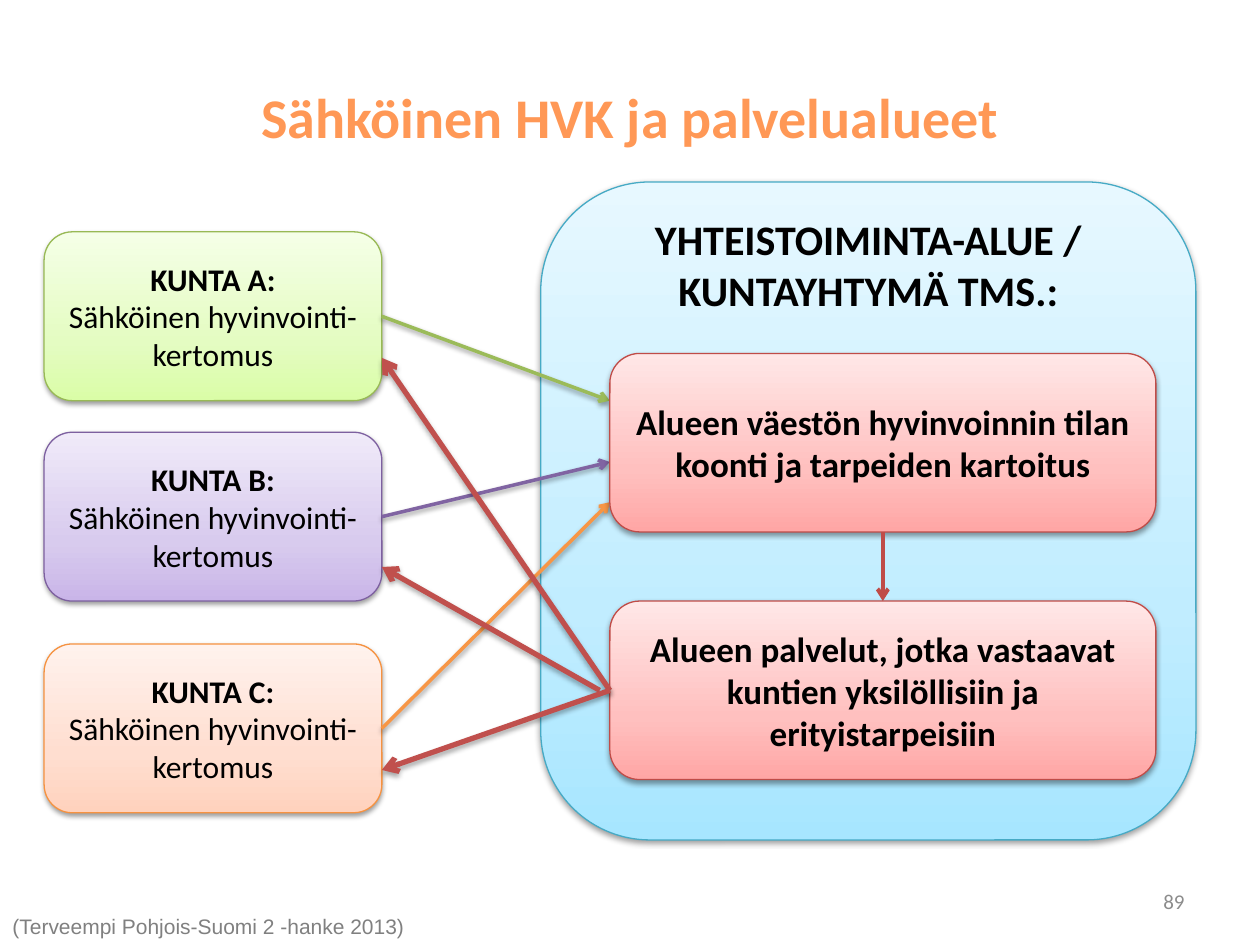
from copy import deepcopy
from dataclasses import dataclass

from pptx import Presentation
from pptx.dml.color import RGBColor
from pptx.enum.shapes import MSO_CONNECTOR, MSO_SHAPE
from pptx.enum.text import MSO_ANCHOR, PP_ALIGN
from pptx.oxml import parse_xml
from pptx.oxml.ns import nsdecls, qn
from pptx.oxml.xmlchemy import OxmlElement
from pptx.util import Pt

LEFT, CENTER, RIGHT = PP_ALIGN.LEFT, PP_ALIGN.CENTER, PP_ALIGN.RIGHT
TOP, MIDDLE = MSO_ANCHOR.TOP, MSO_ANCHOR.MIDDLE
ROUNDED, STRAIGHT = MSO_SHAPE.ROUNDED_RECTANGLE, MSO_CONNECTOR.STRAIGHT
TITLE_ONLY = 5


@dataclass(frozen=True)
class Theme:
    body_font: str = "Calibri"
    source_font: str = "Arial"
    title_size: int = 32
    region_size: int = 24
    service_size: int = 20
    municipality_size: int = 18
    note_size: int = 12
    text: str = "000000"
    title: str = "FF9856"
    number: str = "8C8C8C"
    source: str = "808080"
    feedback: str = "C0504D"
    service_line: str = "BF4C48"
    # Gradient colours run from the bottom edge to the top edge.
    green: tuple = ("DAFDA7", "E4FCC2", "F5FFE7")
    purple: tuple = ("C9B5E8", "D8CBEE", "F0EAF9")
    orange: tuple = ("FFD2BD", "FFDED0", "FFF2ED")
    blue: tuple = ("A7E6FF", "C1EDFF", "E7F8FF")
    red: tuple = ("FFA6A5", "FFC0BF", "FFE7E7")
    stops: tuple = (0, 0.35, 1)


class SlideBuilder:
    """Holds the style and the current slide."""

    def __init__(self, page, theme):
        self.page = page
        self.theme = theme

    def fill_text(self, frame, lines, size, color, align=CENTER, anchor=MIDDLE, font=None):
        """Fill a text frame with (text, bold) lines, one paragraph each."""
        frame.word_wrap = True
        frame.vertical_anchor = anchor
        for index, (text, bold) in enumerate(lines):
            para = frame.add_paragraph() if index else frame.paragraphs[0]
            para.alignment = align
            span = para.add_run()
            span.text = text
            values = {"name": font or self.theme.body_font, "size": Pt(size), "bold": bold}
            for name, value in values.items():
                setattr(span.font, name, value)
            span.font.color.rgb = RGBColor.from_string(color)

    def add_shadow(self, effects, alpha):
        effects.append(parse_xml(
            f'<a:outerShdw {nsdecls("a")} blurRad="{Pt(3.1)}" dist="{Pt(1.6)}" '
            'dir="5400000" rotWithShape="0"><a:srgbClr val="000000">'
            f'<a:alpha val="{alpha * 1000}"/></a:srgbClr></a:outerShdw>'))

    def title(self, text, *place):
        box = self.page.shapes.title
        box.left, box.top, box.width, box.height = map(Pt, place)
        self.fill_text(box.text_frame, [(text, True)], self.theme.title_size, self.theme.title)

    def label(self, text, place, color, **layout):
        box = self.page.shapes.add_textbox(*map(Pt, place))
        self.fill_text(box.text_frame, [(text, False)], self.theme.note_size, color, **layout)

    def panel(self, place, colors, line, lines, size, anchor=MIDDLE):
        box = self.page.shapes.add_shape(ROUNDED, *map(Pt, place))
        box.fill.gradient()
        box.fill.gradient_angle = 90
        stop_list = box._element.spPr.find(".//" + qn("a:gsLst"))
        stop_list.append(deepcopy(stop_list[-1]))
        for stop, color, position in zip(box.fill.gradient_stops, colors, self.theme.stops):
            stop.color.rgb = RGBColor.from_string(color)
            stop.position = position
        box.line.color.rgb = RGBColor.from_string(line)
        box.line.width = Pt(0.75)
        box.shadow.inherit = False
        self.add_shadow(box._element.spPr.find(qn("a:effectLst")), 38)
        if anchor == TOP:
            box.text_frame.margin_top = 0
        self.fill_text(box.text_frame, lines, size, self.theme.text, anchor=anchor)

    def arrow(self, start, end, color, width, shadow=None):
        link = self.page.shapes.add_connector(STRAIGHT, *map(Pt, (*start, *end)))
        link.line.color.rgb = RGBColor.from_string(color)
        link.line.width = Pt(width)
        properties = link._element.spPr
        head = OxmlElement("a:tailEnd")
        head.set("type", "arrow")
        properties.find(qn("a:ln")).append(head)
        effects = OxmlElement("a:effectLst")
        properties.append(effects)
        if shadow:
            self.add_shadow(effects, shadow)


def main():
    deck = Presentation()
    deck.slide_width, deck.slide_height = Pt(720), Pt(540)
    theme = Theme()
    slide = SlideBuilder(deck.slides.add_slide(deck.slide_layouts[TITLE_ONLY]), theme)

    slide.title("Sähköinen HVK ja palvelualueet", 36, 21.6, 648, 90)
    slide.panel((309, 104, 374.4, 376), theme.blue, "46AAC5",
                [("YHTEISTOIMINTA-ALUE / KUNTAYHTYMÄ TMS.:", True)],
                theme.region_size, TOP)

    left, width, height = 25.2, 193, 96.5
    right = left + width
    service_left, service_width, service_height = 348.5, 312, 102
    needs_top, services_top = 202, 343.5

    # name, top, gradient, outline, arrow colour, arrow end, feedback end
    municipalities = [
        ("A", 132.5, theme.green, "98B955", "9BBB59", 229, 204.5),
        ("B", 247, theme.purple, "7D60A0", "8064A2", 264, 324),
        ("C", 368, theme.orange, "F69240", "F79646", 287, 440),
    ]
    for name, top, colors, line, arrow_color, target, _ in municipalities:
        slide.panel((left, top, width, height), colors, line,
                    [(f"KUNTA {name}:", True), ("Sähköinen hyvinvointi-kertomus", False)],
                    theme.municipality_size)
        slide.arrow((right, top + height / 2), (service_left, target), arrow_color, 2, 38)

    services = [
        (needs_top, "Alueen väestön hyvinvoinnin tilan koonti ja tarpeiden kartoitus"),
        (services_top, "Alueen palvelut, jotka vastaavat kuntien yksilöllisiin ja erityistarpeisiin"),
    ]
    for top, text in services:
        slide.panel((service_left, top, service_width, service_height), theme.red,
                    theme.service_line, [(text, True)], theme.service_size)
    middle = service_left + service_width / 2
    slide.arrow((middle, needs_top + service_height), (middle, services_top),
                theme.service_line, 2.25)

    feedback_starts = (service_left, 342.7, service_left)
    for start, municipality in zip(feedback_starts, municipalities):
        slide.arrow((start, services_top + service_height / 2), (right, municipality[-1]),
                    theme.feedback, 3, 35)

    slide.label("89", (516, 500.5, 168, 28.8), theme.number, align=RIGHT)
    slide.label("(Terveempi Pohjois-Suomi 2 -hanke 2013)", (0, 518.2, 394, 21.8),
                theme.source, align=LEFT, anchor=TOP, font=theme.source_font)
    deck.save("out.pptx")


if __name__ == "__main__":
    main()
